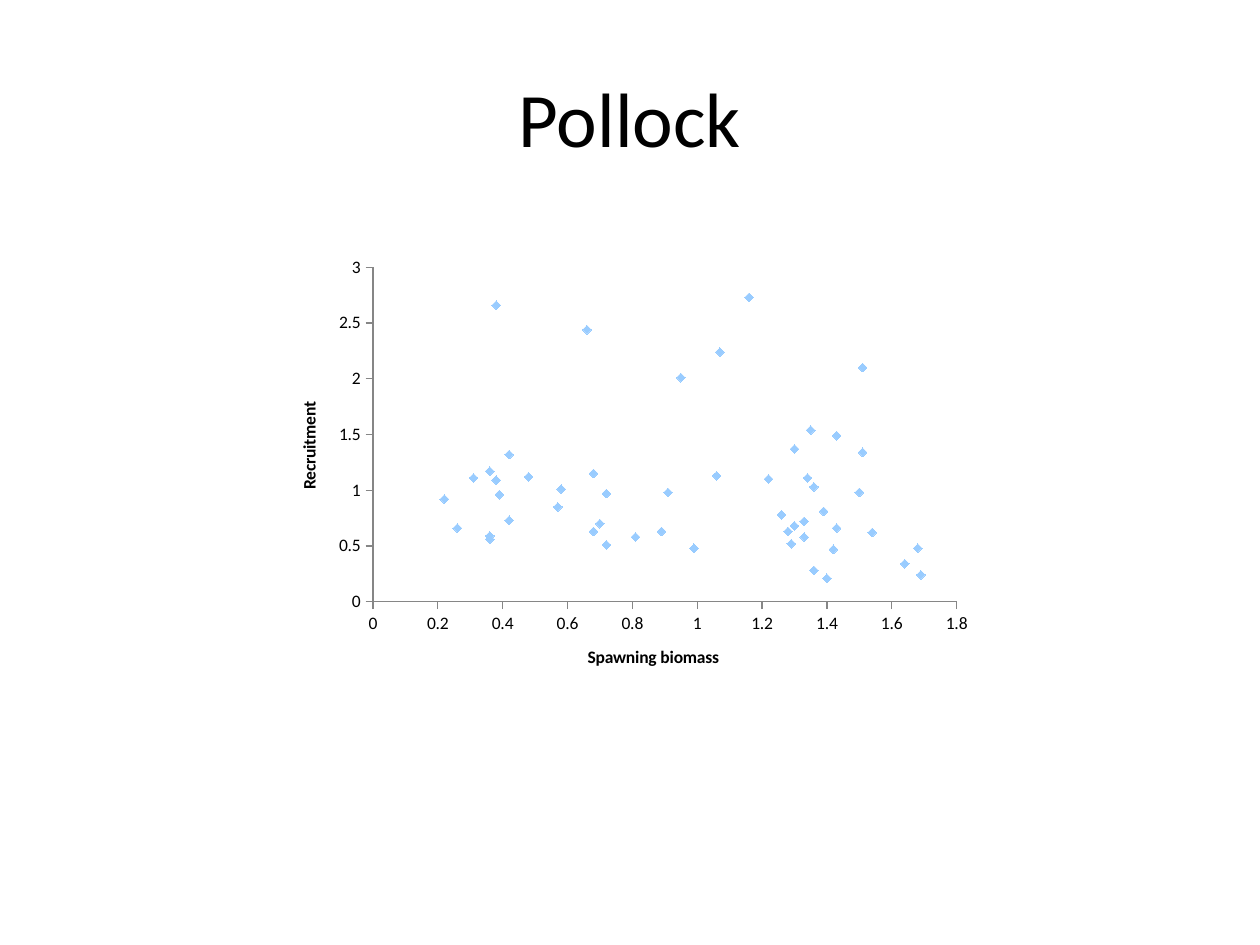
from lxml import etree
from pptx import Presentation
from pptx.chart.data import XyChartData
from pptx.dml.color import RGBColor
from pptx.enum.chart import XL_CHART_TYPE, XL_MARKER_STYLE, XL_TICK_MARK
from pptx.enum.text import MSO_ANCHOR, PP_ALIGN
from pptx.util import Cm, Pt

SCATTER = XL_CHART_TYPE.XY_SCATTER
DIAMOND = XL_MARKER_STYLE.DIAMOND
TICK_OUTSIDE = XL_TICK_MARK.OUTSIDE
TICK_NONE = XL_TICK_MARK.NONE
MIDDLE = MSO_ANCHOR.MIDDLE
CENTER = PP_ALIGN.CENTER

FONT = "Calibri"
COLORS = {"text": "000000", "axis": "868686", "marker": "99CCFF"}

# Spawning biomass, recruitment
STOCK = [
    (0.22, 0.92), (0.26, 0.66), (0.31, 1.11), (0.39, 0.96), (0.48, 1.12),
    (0.58, 1.01), (0.68, 0.63), (0.72, 0.51), (0.68, 1.15), (0.57, 0.85),
    (0.42, 0.73), (0.36, 0.56), (0.36, 0.59), (0.38, 1.09), (0.38, 2.66),
    (0.36, 1.17), (0.42, 1.32), (0.70, 0.70), (1.07, 2.24), (1.33, 0.58),
    (1.43, 1.49), (1.54, 0.62), (1.64, 0.34), (1.69, 0.24), (1.68, 0.48),
    (1.51, 2.10), (1.22, 1.10), (0.91, 0.98), (0.95, 2.01), (1.30, 0.68),
    (1.42, 0.47), (1.50, 0.98), (1.51, 1.34), (1.43, 0.66), (1.33, 0.72),
    (1.34, 1.11), (1.35, 1.54), (1.36, 1.03), (1.28, 0.63), (1.36, 0.28),
    (1.40, 0.21), (1.29, 0.52), (1.06, 1.13), (0.89, 0.63), (0.66, 2.44),
    (0.72, 0.97), (0.81, 0.58), (0.99, 0.48), (1.16, 2.73), (1.30, 1.37),
    (1.26, 0.78), (1.39, 0.81),
]


def color(name):
    return RGBColor.from_string(COLORS[name])


def style_font(font, size, bold=False):
    font.name = FONT
    font.size = Pt(size)
    font.bold = bold
    font.color.rgb = color("text")


def add_title(page, box, text):
    frame = page.shapes.add_textbox(*box).text_frame
    frame.word_wrap = True
    frame.vertical_anchor = MIDDLE
    para = frame.paragraphs[0]
    para.text = text
    para.alignment = CENTER
    style_font(para.font, 44)


def style_axis(axis, title, maximum, step):
    axis.minimum_scale = 0
    axis.maximum_scale = maximum
    axis.major_unit = step
    axis.has_major_gridlines = False
    axis.major_tick_mark = TICK_OUTSIDE
    axis.minor_tick_mark = TICK_NONE
    axis.tick_labels.number_format = "General"
    axis.tick_labels.number_format_is_linked = False
    axis.format.line.color.rgb = color("axis")
    axis.format.line.width = Pt(0.75)
    frame = axis.axis_title.text_frame
    frame.text = title
    style_font(frame.paragraphs[0].font, 10, bold=True)


def set_plot_box(chart, **shares):
    """Fix the inner plot area as shares of the chart's width and height."""
    plot_area = chart.plots[0]._element.getparent()
    namespace = etree.QName(plot_area).namespace
    for old in plot_area.findall(f"{{{namespace}}}layout"):
        plot_area.remove(old)
    layout = etree.Element(f"{{{namespace}}}layout")
    plot_area.insert(0, layout)
    manual = etree.SubElement(layout, f"{{{namespace}}}manualLayout")
    settings = {"layoutTarget": "inner", "xMode": "edge", "yMode": "edge", **shares}
    for tag, value in settings.items():
        etree.SubElement(manual, f"{{{namespace}}}{tag}", val=str(value))


def add_stock_chart(page, box):
    data = XyChartData()
    stock = data.add_series("Series 1")
    for biomass, recruitment in STOCK:
        stock.add_data_point(biomass, recruitment)
    chart = page.shapes.add_chart(SCATTER, *box, data).chart
    chart.has_legend = False
    chart.has_title = False
    style_font(chart.font, 10)
    chart.plots[0].vary_by_categories = False

    # Markers only
    series = chart.plots[0].series[0]
    series.smooth = False
    series.format.line.fill.background()
    series.marker.style = DIAMOND
    series.marker.size = 5
    series.marker.format.fill.solid()
    series.marker.format.fill.fore_color.rgb = color("marker")
    series.marker.format.line.color.rgb = color("marker")

    style_axis(chart.category_axis, "Spawning biomass", 1.8, 0.2)
    style_axis(chart.value_axis, "Recruitment", 3, 0.5)
    set_plot_box(chart, x=0.14, y=0.04, w=0.82, h=0.75)


def main():
    deck = Presentation()
    deck.slide_width, deck.slide_height = Cm(25.4), Cm(19.05)
    page = deck.slides.add_slide(deck.slide_layouts[6])
    add_title(page, (Cm(1.27), Cm(0.76), Cm(22.86), Cm(3.18)), "Pollock")
    add_stock_chart(page, (Cm(5.51), Cm(5.03), Cm(14.35), Cm(8.99)))
    deck.save("out.pptx")


if __name__ == "__main__":
    main()
